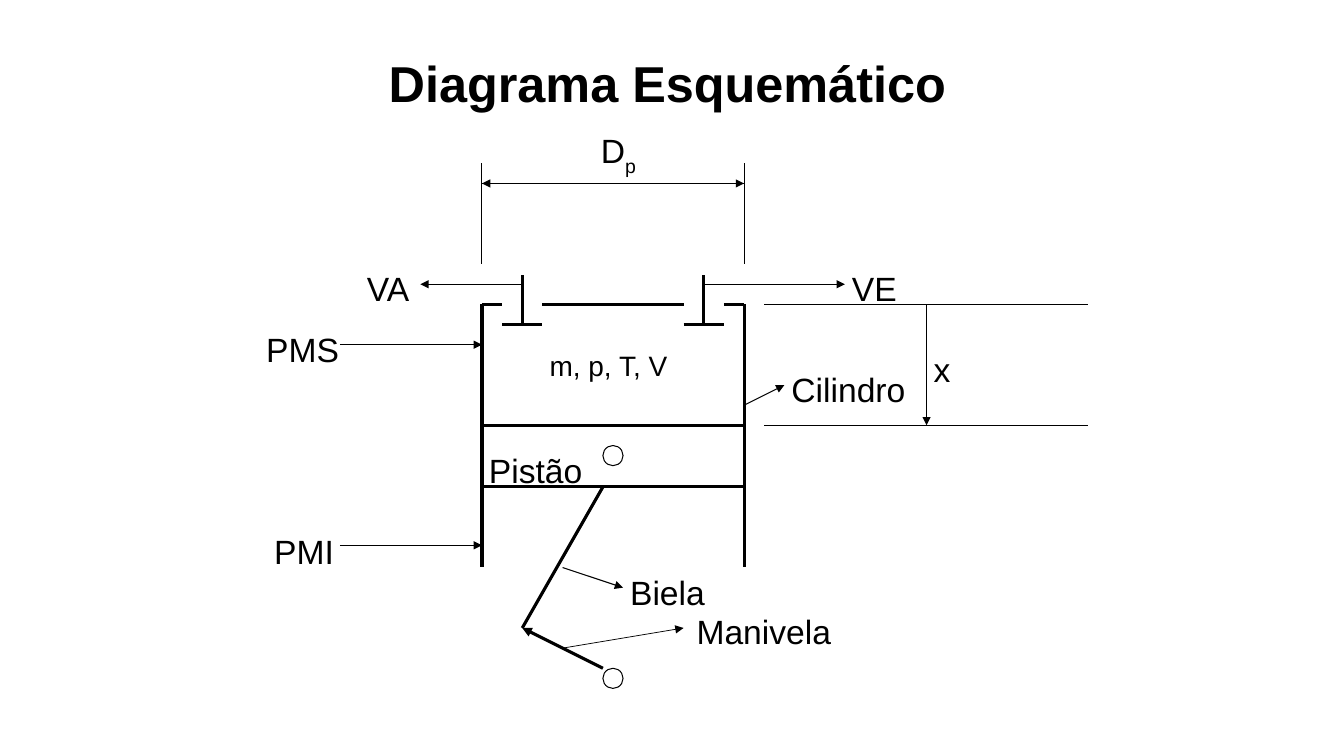
from lxml import etree
from pptx import Presentation
from pptx.dml.color import RGBColor
from pptx.enum.shapes import MSO_CONNECTOR as CONN, MSO_SHAPE as SHAPE
from pptx.enum.text import MSO_ANCHOR as ANCHOR, PP_ALIGN as ALIGN
from pptx.oxml.ns import qn
from pptx.util import Inches, Pt

BLACK, WHITE = "000000", "FFFFFF"
THIN, THICK = 0.75, 2.25
LEFT, RIGHT = 4.78, 7.38
HEAD, PISTON_TOP, PISTON_BASE, SKIRT = 3.02, 4.22, 4.83, 5.63
VALVES = (5.18, 6.98)
CRANK_PIN = (5.18, 6.23)

LABELS = [
    ("Pistão", 4.78, 4.42, 1.17),
    ("x", 9.19, 3.42, 0.6),
    ("Cilindro", 7.78, 3.62, 1.36),
    ("Biela", 6.18, 5.63, 1.03),
    ("VA", 3.57, 2.62, 0.6),
    ("VE", 8.38, 2.62, 0.6),
    ("PMS", 2.57, 3.22, 0.95),
    ("PMI", 2.65, 5.23, 0.87),
]


def color(value):
    """Turn a hex string into a colour."""
    return RGBColor.from_string(value)


def style_font(font, size, bold=False):
    """Set the face, size, weight and colour of a font."""
    font.name, font.size, font.bold = "Arial", Pt(size), bold
    font.color.rgb = color(BLACK)


def add_title(s, text):
    """Place and format the slide title."""
    sp = s.shapes.title
    sp.left, sp.top = Inches(2.37), Inches(0.23)
    sp.width, sp.height = Inches(8.5), Inches(1.25)
    tf = sp.text_frame
    tf.text = text
    tf.vertical_anchor = ANCHOR.MIDDLE
    p = tf.paragraphs[0]
    p.alignment, p.line_spacing = ALIGN.CENTER, 0.9
    style_font(p.runs[0].font, 36, True)


def add_line(s, start, end, width=THIN, arrow=False):
    """Draw a straight line, with an arrowhead at its end if asked."""
    x1, y1, x2, y2 = (Inches(v) for v in (*start, *end))
    line = s.shapes.add_connector(CONN.STRAIGHT, x1, y1, x2, y2)
    line.line.color.rgb = color(BLACK)
    line.line.width = Pt(width)
    if arrow:
        ln = line.line._get_or_add_ln()
        etree.SubElement(ln, qn("a:tailEnd"), type="triangle")
    etree.SubElement(line._element.spPr, qn("a:effectLst"))


def add_label(s, text, x, y, w, h=0.4, size=24, align=ALIGN.LEFT):
    """Add a text label and return its paragraph."""
    tf = s.shapes.add_textbox(Inches(x), Inches(y), Inches(w), Inches(h)).text_frame
    tf.word_wrap = True
    tf.margin_left = tf.margin_right = Inches(0.07)
    tf.margin_top = tf.margin_bottom = Inches(0.04)
    p = tf.paragraphs[0]
    p.text, p.alignment = text, align
    style_font(p.runs[0].font, size)
    return p


def add_pin(s, x, y, d=0.2):
    """Draw a round pin."""
    sp = s.shapes.add_shape(SHAPE.OVAL, Inches(x), Inches(y), Inches(d), Inches(d))
    sp.shadow.inherit = False
    sp.fill.solid()
    sp.fill.fore_color.rgb = color(WHITE)
    sp.line.color.rgb = color(BLACK)
    sp.line.width = Pt(THIN)


def add_engine(s):
    """Draw the cylinder, valves, piston, rod and crank."""
    for x in (LEFT, RIGHT):
        add_line(s, (x, HEAD), (x, SKIRT), THICK)
    for x1, x2 in ((LEFT, 4.98), (5.38, 6.78), (7.18, RIGHT)):
        add_line(s, (x1, HEAD), (x2, HEAD), THICK)
    for y in (PISTON_TOP, PISTON_BASE):
        add_line(s, (LEFT, y), (RIGHT, y), THICK)
    for x in VALVES:
        add_line(s, (x, 2.73), (x, 3.22), THICK)
        add_line(s, (x - 0.2, 3.22), (x + 0.2, 3.22), THICK)
    add_line(s, (5.98, PISTON_BASE), CRANK_PIN, THICK)
    add_line(s, (5.98, 6.63), CRANK_PIN, THICK, arrow=True)
    for y in (4.42, 6.63):
        add_pin(s, 5.98, y)


def add_dimensions(s):
    """Draw the dimension lines for the bore and the piston position."""
    for x, other in ((LEFT, RIGHT), (RIGHT, LEFT)):
        add_line(s, (x, 1.62), (x, 2.62))
        add_line(s, (x, 1.82), (other, 1.82), arrow=True)
    for y in (HEAD, PISTON_TOP):
        add_line(s, (7.58, y), (10.79, y))
    add_line(s, (9.19, HEAD), (9.19, PISTON_TOP), arrow=True)


def add_pointers(s):
    """Draw the arrows between labels and parts."""
    for x, tip in zip(VALVES, (4.17, 8.38)):
        add_line(s, (x, 2.82), (tip, 2.82), arrow=True)
    for y in (3.42, 5.41):
        add_line(s, (3.37, y), (LEFT, y), arrow=True)
    add_line(s, (RIGHT, 4.02), (7.78, 3.82), arrow=True)
    add_line(s, (5.58, SKIRT), (6.18, 5.83), arrow=True)
    add_line(s, (5.58, 6.43), (6.78, 6.23), 0.5, arrow=True)


def add_labels(s):
    """Add every text label of the diagram."""
    for label in LABELS:
        add_label(s, *label)
    add_label(s, "Manivela", 6.67, 6.02, 1.81, 0.6, align=ALIGN.CENTER)
    add_label(s, "m, p, T, V", 5.38, 3.42, 1.52, size=20)
    r = add_label(s, "D", 5.89, 1.25, 0.6).add_run()
    r.text = "p"
    style_font(r.font, 24)
    r._r.get_or_add_rPr().set("baseline", "-30000")


def main():
    """Build the slide and save it."""
    prs = Presentation()
    prs.slide_width, prs.slide_height = Inches(13.33), Inches(7.5)
    s = prs.slides.add_slide(prs.slide_layouts[5])
    add_title(s, "Diagrama Esquemático")
    add_engine(s)
    add_dimensions(s)
    add_pointers(s)
    add_labels(s)
    prs.save("out.pptx")


if __name__ == "__main__":
    main()
